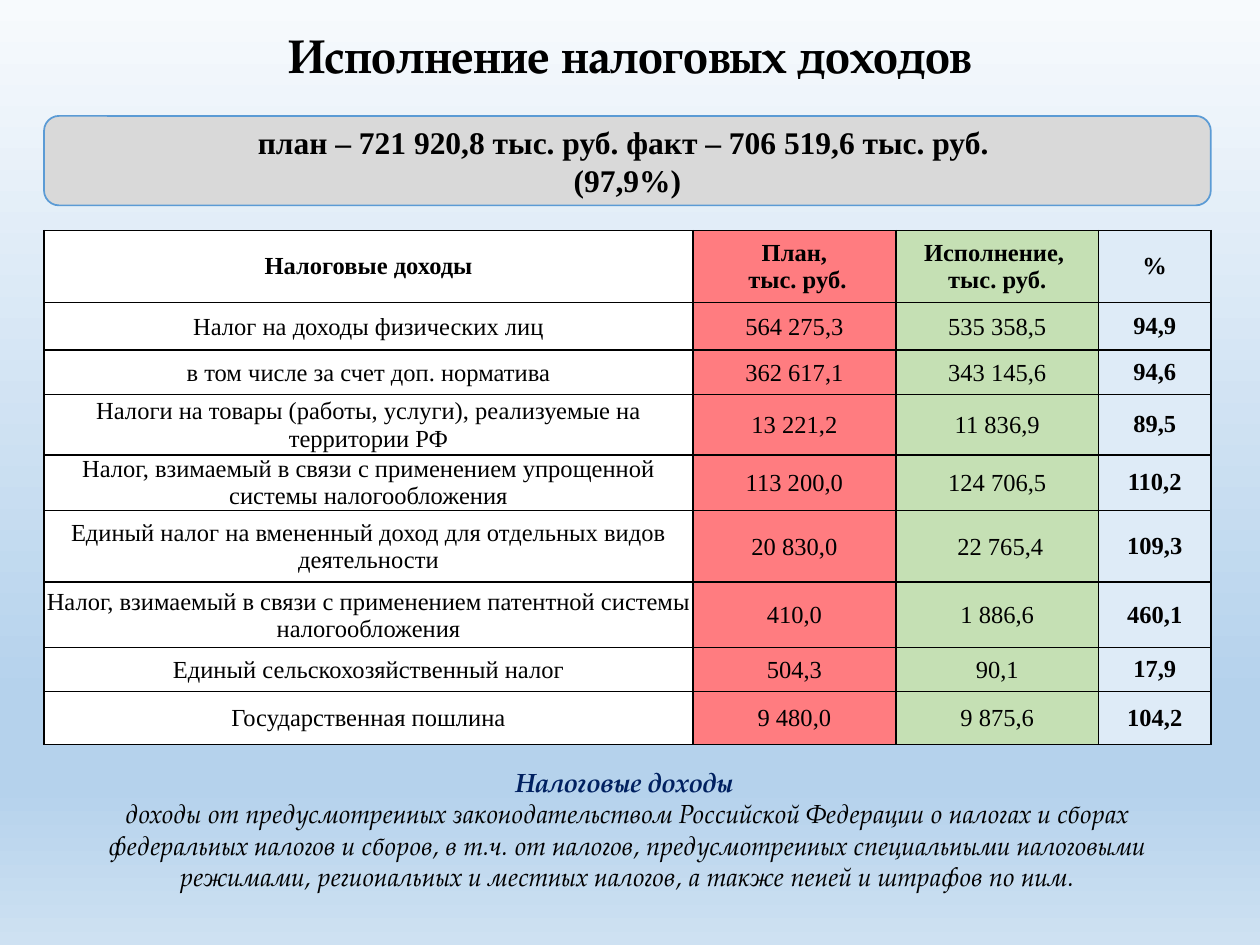
from lxml.etree import SubElement
from pptx import Presentation
from pptx.dml.color import RGBColor
from pptx.enum.shapes import MSO_SHAPE as Shape
from pptx.enum.text import MSO_ANCHOR as Anchor, MSO_AUTO_SIZE as AutoSize, PP_ALIGN as Align
from pptx.oxml.ns import qn
from pptx.util import Inches, Pt

COLORS = {
    "black": "000000", "white": "FFFFFF", "navy": "002060", "grey": "D9D9D9",
    "blue": "5B9BD5", "red": "FF7C80", "green": "C5E0B4", "pale": "DEEBF7",
}
BACKGROUND_STOPS = [(0, "F7FAFD"), (74, "B5D2EC"), (83, "B5D2EC"), (100, "CEE1F2")]
SERIF = "Times New Roman"
DISPLAY = "TeX Gyre Pagella"
LEFT, WIDTH = 0.35, 9.26

COLUMN_WIDTHS = [5.15, 1.61, 1.61, 0.89]
COLUMN_FILLS = ["white", "red", "green", "pale"]
ROW_HEIGHTS = [0.57, 0.38, 0.35, 0.48, 0.44, 0.57, 0.52, 0.35, 0.42]
TAX_ROWS = [
    ("Налоговые доходы", "План,\n тыс. руб.", "Исполнение, \nтыс. руб.", "%"),
    ("Налог на доходы физических лиц", "564 275,3", "535 358,5", "94,9"),
    ("в том числе за счет доп. норматива", "362 617,1", "343 145,6", "94,6"),
    ("Налоги на товары (работы, услуги), реализуемые на территории РФ",
     "13 221,2", "11 836,9", "89,5"),
    ("Налог, взимаемый в связи с применением упрощенной системы налогообложения",
     "113 200,0", "124 706,5", "110,2"),
    ("Единый налог на вмененный доход для отдельных видов деятельности",
     "20 830,0", " 22 765,4", "109,3"),
    ("Налог, взимаемый в связи с применением патентной системы налогообложения",
     "410,0", "1 886,6", "460,1"),
    ("Единый сельскохозяйственный налог", "504,3", "90,1", "17,9"),
    ("Государственная пошлина", "9 480,0", "9 875,6", "104,2"),
]


def rgb(color):
    return RGBColor.from_string(COLORS[color])


def box(left, top, width, height):
    return [Inches(length) for length in (left, top, width, height)]


class SlideBuilder:
    def __init__(self, presentation):
        self.slide = presentation.slides.add_slide(presentation.slide_layouts[5])

    def format_paragraph(self, paragraph, font, size, color="black", bold=False, italic=False):
        paragraph.alignment = Align.CENTER
        for run in paragraph.runs:
            run.font.name = font
            run.font.size = Pt(size)
            run.font.bold = bold
            run.font.italic = italic
            run.font.color.rgb = rgb(color)

    def background(self, stops):
        fill = self.slide.background.fill
        fill.gradient()
        fill.gradient_angle = 270
        stop_list = next(self.slide.element.iter(qn("a:gsLst")))
        for old_stop in list(stop_list):
            stop_list.remove(old_stop)
        for percent, color in stops:
            stop = SubElement(stop_list, qn("a:gs"), pos=str(percent * 1000))
            SubElement(stop, qn("a:srgbClr"), val=color)

    def title(self, text, position):
        title = self.slide.shapes.title
        title.left, title.top, title.width, title.height = position
        frame = title.text_frame
        frame.text = text
        frame.auto_size = AutoSize.NONE
        frame.vertical_anchor = Anchor.MIDDLE
        frame.paragraphs[0].line_spacing = 0.9
        self.format_paragraph(frame.paragraphs[0], DISPLAY, 27, bold=True)

    def banner(self, text, position):
        banner = self.slide.shapes.add_shape(Shape.ROUNDED_RECTANGLE, *position)
        banner.shadow.inherit = False
        banner.fill.solid()
        banner.fill.fore_color.rgb = rgb("grey")
        banner.line.color.rgb = rgb("blue")
        banner.line.width = Pt(1)
        frame = banner.text_frame
        frame.text = text
        frame.vertical_anchor = Anchor.MIDDLE
        for paragraph in frame.paragraphs:
            self.format_paragraph(paragraph, SERIF, 18, bold=True)

    def cell_borders(self, cell):
        properties = cell._tc.get_or_add_tcPr()
        for side in ("lnL", "lnR", "lnT", "lnB"):
            line = SubElement(properties, qn(f"a:{side}"), w=str(Pt(1)))
            fill = SubElement(line, qn("a:solidFill"))
            SubElement(fill, qn("a:srgbClr"), val=COLORS["black"])

    def cell(self, cell, text, fill, bold, margins):
        cell.text = text
        cell.vertical_anchor = Anchor.MIDDLE
        if margins:
            (cell.margin_left, cell.margin_top,
             cell.margin_right, cell.margin_bottom) = box(*margins)
        self.cell_borders(cell)
        cell.fill.solid()
        cell.fill.fore_color.rgb = rgb(fill)
        for paragraph in cell.text_frame.paragraphs:
            self.format_paragraph(paragraph, SERIF, 14, bold=bold)

    def table(self, rows, position):
        table = self.slide.shapes.add_table(len(rows), len(COLUMN_WIDTHS), *position).table
        table.horz_banding = False
        for column, width in zip(table.columns, COLUMN_WIDTHS):
            column.width = Inches(width)
        for row, height in zip(table.rows, ROW_HEIGHTS):
            row.height = Inches(height)
        for r, texts in enumerate(rows):
            for c, (text, fill) in enumerate(zip(texts, COLUMN_FILLS)):
                header, percent = r == 0, c == 3
                body_margins = (0.07, 0, 0.07, 0) if percent else (0.01, 0.01, 0.01, 0)
                self.cell(table.cell(r, c), text, fill, header or percent,
                          None if header else body_margins)

    def definition(self, term, meaning, position):
        frame = self.slide.shapes.add_textbox(*position).text_frame
        frame.word_wrap = True
        frame.auto_size = AutoSize.SHAPE_TO_FIT_TEXT
        frame.text = f"{term}\n{meaning}"
        term_line, meaning_lines = frame.paragraphs
        self.format_paragraph(term_line, DISPLAY, 15, "navy", bold=True, italic=True)
        self.format_paragraph(meaning_lines, DISPLAY, 15, italic=True)


def main():
    presentation = Presentation()
    presentation.slide_width, presentation.slide_height = Inches(10), Inches(7.5)
    builder = SlideBuilder(presentation)
    builder.background(BACKGROUND_STOPS)
    builder.table(TAX_ROWS, box(LEFT, 1.83, WIDTH, sum(ROW_HEIGHTS)))
    builder.title("Исполнение налоговых доходов", box(0.51, 0.22, 8.98, 0.49))
    builder.banner("план – 721 920,8 тыс. руб. факт – 706 519,6 тыс. руб. \n(97,9%)",
                   box(LEFT, 0.92, WIDTH, 0.71))
    builder.definition(
        "Налоговые доходы ",
        "доходы от предусмотренных законодательством Российской Федерации о налогах и сборах "
        "федеральных налогов и сборов, в т.ч. от налогов, предусмотренных специальными "
        "налоговыми режимами, региональных и местных налогов, а также пеней и штрафов по ним.",
        box(LEFT, 6.03, WIDTH, 1.11))
    presentation.save("out.pptx")


if __name__ == "__main__":
    main()
